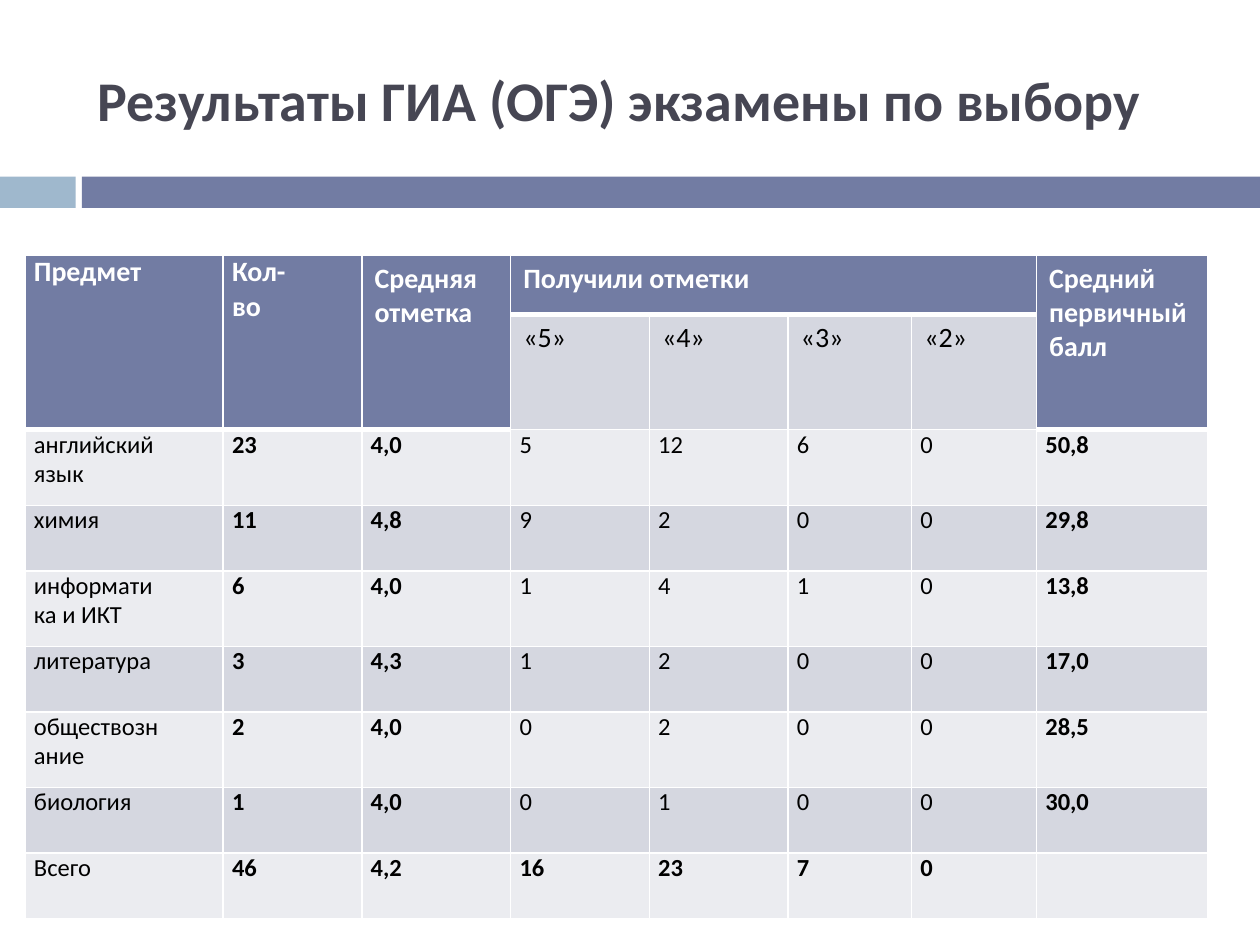
"""Builds the slide with the results of the elective exams."""
import dataclasses

import lxml.etree
import pptx
import pptx.dml.color
import pptx.enum.shapes
import pptx.enum.text
import pptx.oxml.ns
import pptx.util

SLIDE_WIDTH = pptx.util.Inches(10)
SLIDE_HEIGHT = pptx.util.Inches(7.5)


@dataclasses.dataclass(frozen=True)
class Theme:
    """Colours, font and type sizes of the slide."""
    font: str = "Calibri"
    title_size: int = 32
    header_size: int = 16
    body_size: int = 14
    title: str = "464653"
    band: str = "727CA3"
    accent: str = "9FB8CD"
    light: str = "EBECF0"
    dark: str = "D5D7E0"
    white: str = "FFFFFF"
    black: str = "000000"


THEME = Theme()
TITLE = "Результаты ГИА (ОГЭ) экзамены по выбору"
HEADINGS = {0: "Предмет", 1: "Кол-во", 2: "Средняя отметка",
            3: "Получили отметки", 7: "Средний первичный балл"}
MARKS = {3: "«5»", 4: "«4»", 5: "«3»", 6: "«2»"}
RESULTS = [
    ["английский язык", "23", "4,0", "5", "12", "6", "0", "50,8"],
    ["химия", "11", "4,8", "9", "2", "0", "0", "29,8"],
    ["информатика и ИКТ", "6", "4,0", "1", "4", "1", "0", "13,8"],
    ["литература", "3", "4,3", "1", "2", "0", "0", "17,0"],
    ["обществознание", "2", "4,0", "0", "2", "0", "0", "28,5"],
    ["биология", "1", "4,0", "0", "1", "0", "0", "30,0"],
    ["Всего", "46", "4,2", "16", "23", "7", "0", ""],
]
COLUMN_WEIGHTS = [1.57, 1.1, 1.18, 1.1, 1.1, 0.98, 0.99, 1.36]
ROW_WEIGHTS = [0.47, 0.69, 0.6, 0.52, 0.6, 0.52, 0.6, 0.52, 0.52]
BOLD_COLUMNS = {1, 2, 7}


def share_box(left, top, width, height):
    """Turn shares of the slide into a box of lengths."""
    return (int(left * SLIDE_WIDTH), int(top * SLIDE_HEIGHT),
            int(width * SLIDE_WIDTH), int(height * SLIDE_HEIGHT))


def rgb(colour):
    """Return the colour object of a hex value."""
    return pptx.dml.color.RGBColor.from_string(colour)


def add_run(paragraph, text, size, colour, bold):
    """Add one formatted run to a paragraph."""
    run = paragraph.add_run()
    run.text = text
    run.font.name = THEME.font
    run.font.size = pptx.util.Pt(size)
    run.font.bold = bold
    run.font.color.rgb = rgb(colour)


def place_title(slide, box):
    """Move the title placeholder into the box and fill it."""
    title = slide.shapes.title
    title.left, title.top, title.width, title.height = box
    frame = title.text_frame
    frame.word_wrap = True
    frame.vertical_anchor = pptx.enum.text.MSO_ANCHOR.MIDDLE
    frame.paragraphs[0].alignment = pptx.enum.text.PP_ALIGN.LEFT
    add_run(frame.paragraphs[0], TITLE, THEME.title_size, THEME.title, True)


def place_band(slide, box):
    """Split the box into a short accent bar and a long band."""
    left, top, width, height = box
    for start, end, colour in ((0, 0.06, THEME.accent), (0.065, 1, THEME.band)):
        bar = slide.shapes.add_shape(
            pptx.enum.shapes.MSO_SHAPE.RECTANGLE, left + int(start * width), top,
            int((end - start) * width), height)
        bar.shadow.inherit = False
        bar.fill.solid()
        bar.fill.fore_color.rgb = rgb(colour)
        bar.line.fill.background()


def style_cell(cell, colour, bottom_width):
    """Fill a cell and draw its white borders."""
    cell.fill.solid()
    cell.fill.fore_color.rgb = rgb(colour)
    properties = cell._tc.get_or_add_tcPr()
    qn = pptx.oxml.ns.qn
    for index, side in enumerate(("lnL", "lnR", "lnT", "lnB")):
        width = bottom_width if side == "lnB" else 1
        border = lxml.etree.Element(qn(f"a:{side}"), w=str(pptx.util.Pt(width)))
        solid = lxml.etree.SubElement(border, qn("a:solidFill"))
        lxml.etree.SubElement(solid, qn("a:srgbClr"), val=THEME.white)
        properties.insert(index, border)


def write_cell(cell, text, size, colour, bold, compact):
    """Write a cell; compact ones are justified with a right indent."""
    paragraph = cell.text_frame.paragraphs[0]
    if compact:
        cell.margin_left = cell.margin_right = pptx.util.Inches(0.07)
        cell.margin_top = cell.margin_bottom = 0
        paragraph.alignment = pptx.enum.text.PP_ALIGN.JUSTIFY
        paragraph._p.get_or_add_pPr().set("marR", str(pptx.util.Inches(0.43)))
    if text:
        add_run(paragraph, text, size, colour, bold)


def fill_header(table):
    """Merge and write the two header rows."""
    for column, heading in HEADINGS.items():
        end = (0, max(MARKS)) if column in MARKS else (1, column)
        table.cell(0, column).merge(table.cell(*end))
        write_cell(table.cell(0, column), heading, THEME.header_size,
                   THEME.white, True, column < 2)
    for column, mark in MARKS.items():
        write_cell(table.cell(1, column), mark, THEME.header_size,
                   THEME.black, False, False)


def place_results(slide, box):
    """Build the results table in the box."""
    left, top, width, height = box
    table = slide.shapes.add_table(
        len(ROW_WEIGHTS), len(COLUMN_WEIGHTS), left, top, width, height).table
    table.first_row = table.horz_banding = False
    for column, weight in zip(table.columns, COLUMN_WEIGHTS):
        column.width = int(width * weight / sum(COLUMN_WEIGHTS))
    for row, weight in zip(table.rows, ROW_WEIGHTS):
        row.height = int(height * weight / sum(ROW_WEIGHTS))
    for row in range(len(ROW_WEIGHTS)):
        for column in range(len(COLUMN_WEIGHTS)):
            heading = row == 0 or (row == 1 and column not in MARKS)
            stripe = THEME.dark if row % 2 else THEME.light
            style_cell(table.cell(row, column),
                       THEME.band if heading else stripe, 3 if heading else 1)
    fill_header(table)
    for row, values in enumerate(RESULTS, start=2):
        is_total = row == len(ROW_WEIGHTS) - 1
        for column, value in enumerate(values):
            bold = column in BOLD_COLUMNS or (is_total and column > 0)
            write_cell(table.cell(row, column), value, THEME.body_size,
                       THEME.black, bold, True)


def main():
    """Build and save the presentation."""
    presentation = pptx.Presentation()
    presentation.slide_width = SLIDE_WIDTH
    presentation.slide_height = SLIDE_HEIGHT
    slide = presentation.slides.add_slide(presentation.slide_layouts[5])
    slide.background.fill.solid()
    slide.background.fill.fore_color.rgb = rgb(THEME.white)
    place_band(slide, share_box(0, 0.187, 1, 0.033))
    place_title(slide, share_box(0.067, 0.033, 0.892, 0.144))
    place_results(slide, share_box(0.02, 0.27, 0.939, 0.672))
    presentation.save("out.pptx")


if __name__ == "__main__":
    main()
